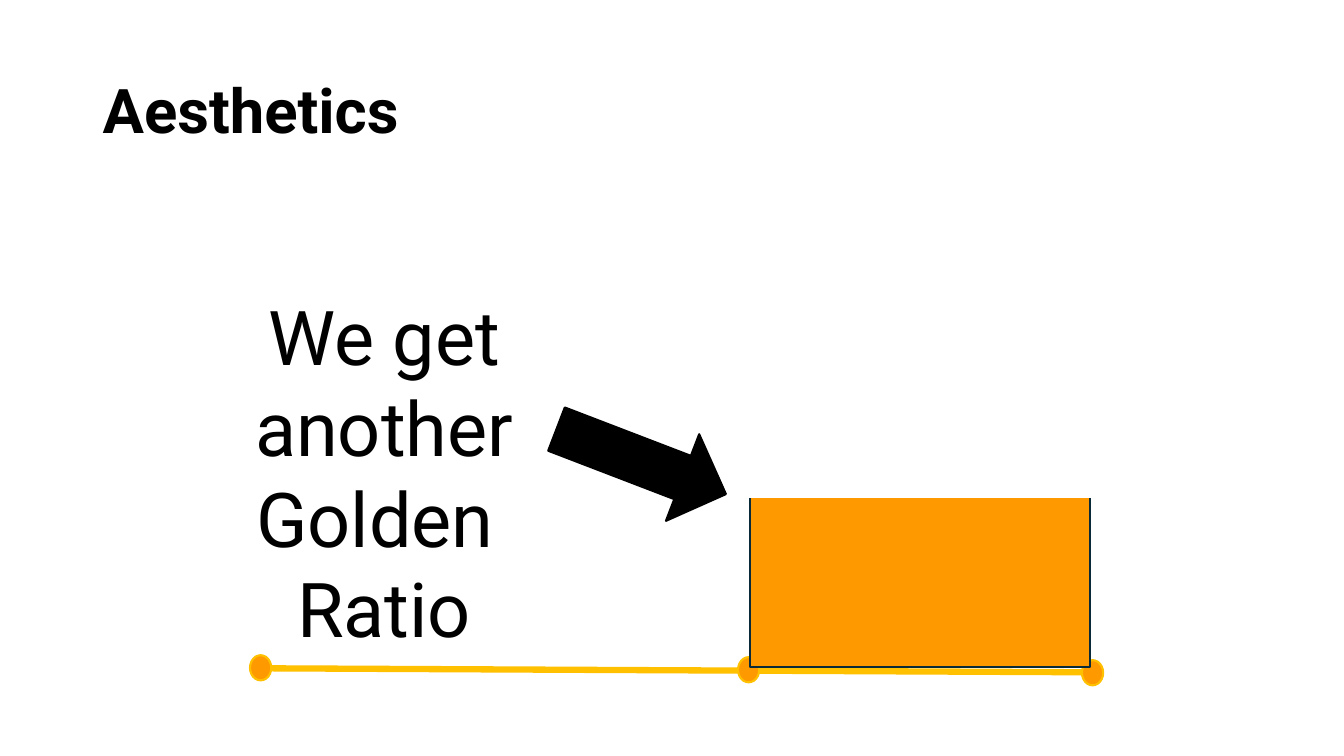
from lxml import etree
from pptx import Presentation
from pptx import util as u
from pptx.dml.color import RGBColor
from pptx.enum import shapes, text
from pptx.oxml.ns import qn

# Grid of 100 columns by 100 rows
WIDTH, HEIGHT = u.Inches(13.33), u.Inches(7.5)
FONT = "Roboto"
BLACK, WHITE = "000000", "FFFFFF"
ORANGE, GOLD, NAVY = "FF9900", "FFC000", "092A39"


def color(value):
    return RGBColor.from_string(value)


def col(columns):
    return round(WIDTH * columns / 100)


def row(rows):
    return round(HEIGHT * rows / 100)


def area(left, top, width, height):
    return col(left), row(top), col(width), row(height)


def add_text(slide, box, lines, size, anchor, align, bold=False, spacing=1.0, inset=0.1):
    frame = slide.shapes.add_textbox(*box).text_frame
    frame.word_wrap = True
    frame.vertical_anchor = anchor
    frame.margin_left = frame.margin_right = u.Inches(inset)
    frame.text = "\n".join(lines)
    for paragraph in frame.paragraphs:
        paragraph.alignment = align
        paragraph.line_spacing = spacing
        paragraph.font.name = FONT
        paragraph.font.size = u.Pt(size)
        paragraph.font.bold = bold
        paragraph.font.color.rgb = color(BLACK)


def add_figure(slide, kind, box, fill, line, rotation=0):
    shape = slide.shapes.add_shape(kind, *box)
    shape.shadow.inherit = False
    shape.fill.solid()
    shape.fill.fore_color.rgb = color(fill)
    shape.line.color.rgb = color(line)
    shape.line.width = u.Pt(1.5)
    shape.rotation = rotation


def add_line(slide, start, end, line, width):
    connector = slide.shapes.add_connector(
        shapes.MSO_CONNECTOR.STRAIGHT, col(start[0]), row(start[1]), col(end[0]), row(end[1]))
    connector.line.color.rgb = color(line)
    connector.line.width = u.Pt(width)
    etree.SubElement(connector.element.spPr, qn("a:effectLst"))


def main():
    presentation = Presentation()
    presentation.slide_width, presentation.slide_height = WIDTH, HEIGHT
    slide = presentation.slides.add_slide(presentation.slide_layouts[6])
    kinds = shapes.MSO_SHAPE

    # Title
    add_text(slide, area(6.9, 5.33, 86.27, 19.33), ["Aesthetics"], 44,
             text.MSO_ANCHOR.MIDDLE, text.PP_ALIGN.LEFT, bold=True, spacing=0.9)

    # Divided segment with its three points
    add_line(slide, (81.47, 88.93), (19.58, 88.4), GOLD, 4.5)
    for left, top in ((18.6, 86.67), (54.91, 86.93), (80.5, 87.33)):
        add_figure(slide, kinds.OVAL, area(left, top, 1.58, 3.33), ORANGE, GOLD)

    # Rectangle on the shorter part
    add_figure(slide, kinds.RECTANGLE, area(55.81, 28, 25.28, 60.27), ORANGE, NAVY)

    # Callout and arrow
    add_text(slide, area(9.38, 37.73, 38.41, 37.73), ["We get another", "Golden ", "Ratio"], 54,
             text.MSO_ANCHOR.TOP, text.PP_ALIGN.CENTER, inset=0.2)
    add_figure(slide, kinds.RIGHT_ARROW, area(40.96, 54.93, 13.5, 12.27), BLACK, BLACK, rotation=21)

    # White square that cuts off the top of the rectangle
    add_figure(slide, kinds.RECTANGLE, area(55.74, 28, 25.73, 37.73), WHITE, WHITE)

    presentation.save("out.pptx")


if __name__ == "__main__":
    main()
